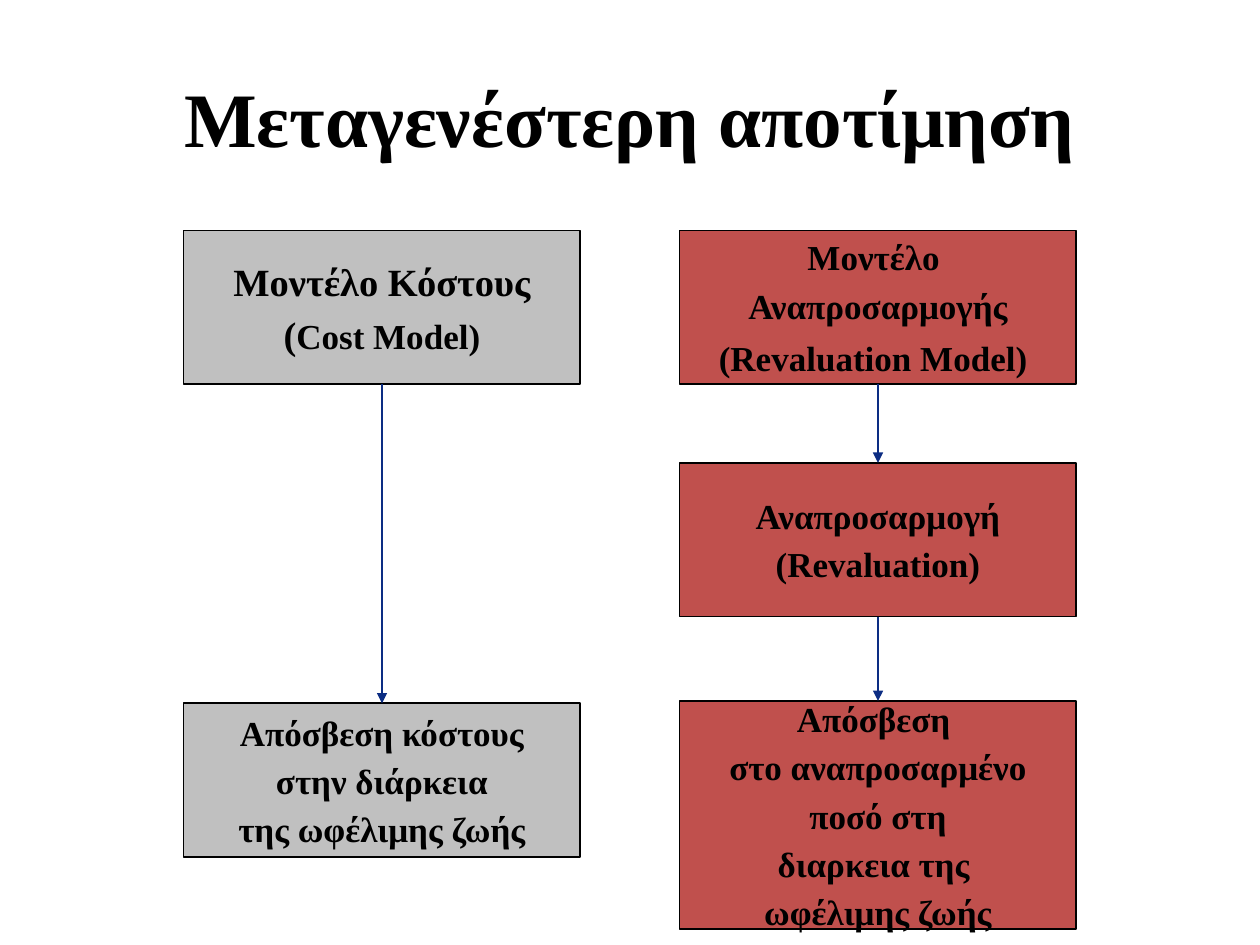
from typing import NamedTuple

from lxml import etree
from pptx import Presentation
from pptx.dml.color import RGBColor
from pptx.enum import shapes, text
from pptx.oxml import ns
from pptx.util import Cm, Pt

FONT = "Times New Roman"
BLACK, GRAY, RED, BLUE = "000000", "C0C0C0", "C0504D", "0C2D83"
COST_LEFT, REVALUATION_LEFT = 3.7, 13.7
BOX_WIDTH, BOX_HEIGHT = 8, 3.1
TOP, BOTTOM = 0, 2  # connection sites of a rectangle


class Span(NamedTuple):
    wording: str
    size: int = 20


class Step(NamedTuple):
    top: float
    lines: list[list[Span]]
    height: float = BOX_HEIGHT


class Model(NamedTuple):
    left: float
    fill: str
    steps: list[Step]


def plain(*wordings: str) -> list[list[Span]]:
    """One 20 pt span for each line."""
    return [[Span(wording)] for wording in wordings]


MODELS = [
    Model(COST_LEFT, GRAY, [
        Step(4.65, [[Span(" Μοντέλο Κόστους ", 22)],
                    [Span("(", 22), Span("Cost Model)")]]),
        Step(14.18, plain("Απόσβεση κόστους", " στην διάρκεια ",
                          "της ωφέλιμης ζωής")),
    ]),
    Model(REVALUATION_LEFT, RED, [
        Step(4.65, plain("Μοντέλο ", "Αναπροσαρμογής")
             + [[Span("(Revaluation Model)"), Span(" ", 22)]]),
        Step(9.33, plain("Αναπροσαρμογή", "(Revaluation)")),
        Step(14.13, plain("Απόσβεση ", "στο αναπροσαρμένο", " ποσό στη ",
                          "διαρκεια της ", "ωφέλιμης ζωής"), 4.6),
    ]),
]


def rgb(value: str) -> RGBColor:
    return RGBColor.from_string(value)


def format_font(font, size: int) -> None:
    font.name = FONT
    font.size = Pt(size)
    font.bold = True
    font.color.rgb = rgb(BLACK)


def add_title(slide, wording: str) -> None:
    title = slide.shapes.title
    title.left, title.top, title.width, title.height = (
        Cm(1.27), Cm(0.76), Cm(22.86), Cm(3.18))
    title.text_frame.text = wording
    title.text_frame.vertical_anchor = text.MSO_ANCHOR.MIDDLE
    heading = title.text_frame.paragraphs[0]
    heading.alignment = text.PP_ALIGN.CENTER
    format_font(heading.runs[0].font, 44)


def add_step(slide, model: Model, step: Step):
    box = slide.shapes.add_shape(
        shapes.MSO_SHAPE.RECTANGLE, Cm(model.left), Cm(step.top),
        Cm(BOX_WIDTH), Cm(step.height))
    box.shadow.inherit = False
    box.fill.solid()
    box.fill.fore_color.rgb = rgb(model.fill)
    box.line.color.rgb = rgb(BLACK)
    box.line.width = Pt(1)
    frame = box.text_frame
    frame.word_wrap = False
    frame.vertical_anchor = text.MSO_ANCHOR.MIDDLE
    for index, line in enumerate(step.lines):
        paragraph = frame.add_paragraph() if index else frame.paragraphs[0]
        paragraph.alignment = text.PP_ALIGN.CENTER
        if index:
            largest = max(span.size for span in line)
            paragraph.space_before = Pt(4 if largest > 20 else 3.5)
        for span in line:
            run = paragraph.add_run()
            run.text = span.wording
            format_font(run.font, span.size)
    return box


def add_arrow(slide, upper, lower) -> None:
    arrow = slide.shapes.add_connector(
        shapes.MSO_CONNECTOR.STRAIGHT, 0, 0, 0, 0)
    arrow.begin_connect(upper, BOTTOM)
    arrow.end_connect(lower, TOP)
    arrow.line.color.rgb = rgb(BLUE)
    arrow.line.width = Pt(1.5)
    etree.SubElement(arrow.line._get_or_add_ln(), ns.qn("a:tailEnd"),
                     type="triangle")
    etree.SubElement(arrow._element.spPr, ns.qn("a:effectLst"))


def main() -> None:
    deck = Presentation()
    deck.slide_width, deck.slide_height = Cm(25.4), Cm(19.05)
    slide = deck.slides.add_slide(deck.slide_layouts.get_by_name("Title Only"))
    add_title(slide, "Μεταγενέστερη αποτίμηση")
    for model in MODELS:
        boxes = [add_step(slide, model, step) for step in model.steps]
        for upper, lower in zip(boxes, boxes[1:]):
            add_arrow(slide, upper, lower)
    deck.save("out.pptx")


if __name__ == "__main__":
    main()
